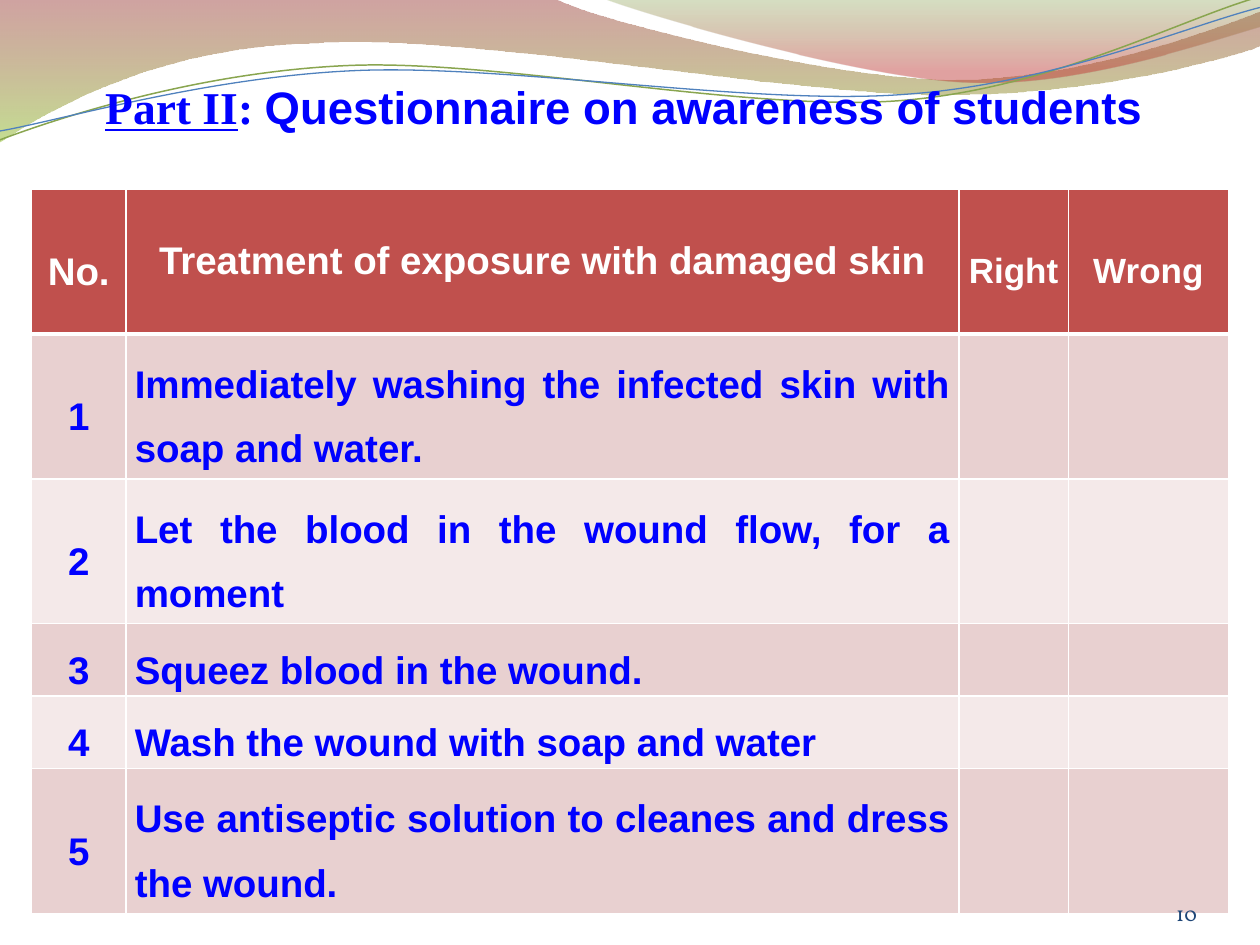
import math
import pptx
import pptx.util
import pptx.dml.color
import pptx.enum.text
import pptx.oxml
import pptx.oxml.ns
from pptx.util import Inches, Pt

RGBColor = pptx.dml.color.RGBColor
ALIGN = pptx.enum.text.PP_ALIGN
ANCHOR = pptx.enum.text.MSO_ANCHOR
qn = pptx.oxml.ns.qn
NS = pptx.oxml.ns.nsdecls("a")

BLUE = RGBColor(0x00, 0x00, 0xFF)
NAVY = RGBColor(0x1E, 0x46, 0x77)
WHITE = RGBColor(0xFF, 0xFF, 0xFF)
RED = RGBColor(0xC0, 0x50, 0x4D)
ROSE = RGBColor(0xE8, 0xD0, 0xD0)
PALE = RGBColor(0xF4, 0xE9, 0xE9)
WINE = RGBColor(0x97, 0x33, 0x30)
LIME = RGBColor(0x95, 0xC2, 0x38)
OLIVE = RGBColor(0x76, 0x95, 0x37)
BRICK = RGBColor(0xBE, 0x33, 0x30)
GREEN = RGBColor(0x89, 0xA5, 0x4F)
SKY = RGBColor(0x4F, 0x81, 0xBD)

# Each wave is a start point, then points (2 numbers) or Bezier curves (6).
BAND = [(0, 0), (4.4, -0.01),
        (4.76, 0.17, 6.64, 0.63, 7.58, 0.63),
        (8.53, 0.63, 9.58, 0.26, 10, 0.09), (10.01, 0.36),
        (9.83, 0.44, 8.7, 0.76, 7.46, 0.75),
        (6.22, 0.75, 3.82, 0.28, 2.57, 0.34),
        (1.29, 0.36, 0.46, 0.83, -0.01, 1.13)]
CREST = [(4.79, -0.01),
         (5.09, 0.11, 6.82, 0.62, 7.69, 0.65),
         (8.56, 0.69, 9.61, 0.32, 10, 0.21), (10, 0)]
UPPER = [(0, 1.11),
         (0.48, 0.93, 1.58, 0.57, 2.77, 0.52),
         (3.95, 0.47, 5.93, 0.89, 7.13, 0.8),
         (8.33, 0.71, 9.38, 0.15, 9.98, -0.02)]
LOWER = [(0, 1.04),
         (0.47, 0.96, 1.64, 0.61, 2.83, 0.56),
         (4.03, 0.51, 5.97, 0.84, 7.17, 0.75),
         (8.36, 0.67, 9.41, 0.21, 10, 0.06)]
TILT = -2.7

TALL = 1.15
COLS = [0.75, 6.61, 0.87, 1.27]
ROWS = [TALL, TALL, TALL, TALL / 2, TALL / 2, TALL]
HEADS = ["No.", "Treatment of exposure with damaged skin", "Right", "Wrong"]
ITEMS = ["Immediately washing the infected skin with soap and water.",
         "Let the blood in the wound flow, for a moment",
         "Squeez blood in the wound.",
         "Wash the wound with soap and water",
         "Use antiseptic solution to cleanes and dress the wound."]


def turn(point, angle, pivot):
    rad = math.radians(angle)
    x, y = point[0] - pivot[0], point[1] - pivot[1]
    return (pivot[0] + x * math.cos(rad) - y * math.sin(rad),
            pivot[1] + x * math.sin(rad) + y * math.cos(rad))


def add_wave(slide, wave, close, tilt=0, pivot=(5, 0.57)):
    """Draw a wave; a tilted one is laid level, then rotated into place."""
    points = [turn(part[i:i + 2], -tilt, pivot)
              for part in wave for i in range(0, len(part), 2)]
    points = [(x * 1000, y * 1000) for x, y in points]
    pen = slide.shapes.build_freeform(*points[0], scale=Inches(1) / 1000)
    pen.add_line_segments(points[1:], close=close)
    shape = pen.convert_to_shape()
    shape.shadow.inherit = False
    shape.rotation = tilt
    lines = list(shape._element.iter(qn("a:lnTo")))
    for part in wave[1:]:
        group, lines = lines[:len(part) // 2], lines[len(part) // 2:]
        if len(group) == 3:
            bend = pptx.oxml.parse_xml(f"<a:cubicBezTo {NS}/>")
            group[0].addprevious(bend)
            for line in group:
                bend.append(line[0])
                line.getparent().remove(line)
    return shape


def add_fill(slide, wave, stops):
    """Draw a filled wave; stops hold position, colour and opacity."""
    shape = add_wave(slide, wave, True)
    shape.line.fill.background()
    shape.fill.gradient()
    shape.fill.gradient_angle = 270
    for stop, (place, color, _) in zip(shape.fill.gradient_stops, stops):
        stop.position = place
        stop.color.rgb = color
    tags = list(shape._element.spPr.iter(qn("a:srgbClr")))
    for tag, (_, _, alpha) in zip(tags, stops):
        tag.append(pptx.oxml.parse_xml(
            f'<a:alpha {NS} val="{alpha * 1000}"/>'))


def add_curve(slide, wave, color, width):
    shape = add_wave(slide, wave, False, TILT)
    shape.fill.background()
    shape.line.color.rgb = color
    shape.line.width = Pt(width)


def style(run, face, size, color, bold=True):
    font = run.font
    font.name = face
    font.size = Pt(size)
    font.color.rgb = color
    font.bold = bold


def add_title(slide):
    title = slide.shapes.title
    slide.shapes._spTree.append(title._element)
    title.left, title.top = Inches(0.58), Inches(0.58)
    title.width, title.height = Inches(8.75), Inches(0.54)
    frame = title.text_frame
    frame.vertical_anchor = ANCHOR.TOP
    frame.auto_size = pptx.enum.text.MSO_AUTO_SIZE.SHAPE_TO_FIT_TEXT
    line = frame.paragraphs[0]
    line.alignment = ALIGN.CENTER
    for text, face in [("Part II", "Times New Roman"),
                       (": ", "Times New Roman"),
                       ("Questionnaire on awareness of students", "Arial")]:
        run = line.add_run()
        run.text = text
        style(run, face, 26, BLUE)
    line.runs[0].font.underline = True


def edge_cell(cell, sides):
    """Give white borders; sides maps L, R, T, B to a width in points."""
    props = cell._tc.get_or_add_tcPr()
    for i, (side, width) in enumerate(sides.items()):
        props.insert(i, pptx.oxml.parse_xml(
            f'<a:ln{side} {NS} w="{Pt(width)}"><a:solidFill>'
            f'<a:srgbClr val="{WHITE}"/></a:solidFill></a:ln{side}>'))


def fill_cell(cell, text, size, color, align, spaced=True, before=6):
    cell.vertical_anchor = ANCHOR.MIDDLE
    cell.margin_left = cell.margin_right = Inches(0.07)
    cell.margin_top = cell.margin_bottom = 0
    line = cell.text_frame.paragraphs[0]
    line.text = text
    line.alignment = align
    if spaced:
        line.line_spacing = 1.5
        line.space_before = Pt(before)
        line.space_after = Pt(6)
    style(line.runs[0], "Arial", size, color)


def add_grid(slide):
    table = slide.shapes.add_table(
        len(ROWS), len(COLS), Inches(0.25), Inches(1.5),
        Inches(sum(COLS)), Inches(sum(ROWS))).table
    for col, width in zip(table.columns, COLS):
        col.width = Inches(width)
    for i, height in enumerate(ROWS):
        table.rows[i].height = Inches(height)
        for cell in table.rows[i].cells:
            cell.fill.solid()
            cell.fill.fore_color.rgb = (
                RED if i == 0 else ROSE if i % 2 else PALE)
            edge_cell(cell, {"L": 1, "R": 1, "T": 3 if i == 1 else 1,
                             "B": 3 if i == 0 else 1})
    for j, head in enumerate(HEADS):
        fill_cell(table.cell(0, j), head, 22 if j < 2 else 20, WHITE,
                  ALIGN.CENTER, spaced=j != 1)
    for i, item in enumerate(ITEMS, 1):
        before = 0 if i == len(ITEMS) else 6
        for j, (text, align) in enumerate([(str(i), ALIGN.CENTER),
                                           (item, ALIGN.JUSTIFY)]):
            fill_cell(table.cell(i, j), text, 22, BLUE, align, before=before)


def add_number(slide):
    box = slide.shapes.add_textbox(
        Inches(8.67), Inches(6.95), Inches(0.83), Inches(0.4))
    frame = box.text_frame
    frame.word_wrap = True
    frame.vertical_anchor = ANCHOR.BOTTOM
    frame.margin_left = frame.margin_right = 0
    frame.margin_top = frame.margin_bottom = 0
    frame.text = "10"
    line = frame.paragraphs[0]
    line.alignment = ALIGN.RIGHT
    style(line.runs[0], "Vollkorn", 12, NAVY, bold=False)


def main():
    deck = pptx.Presentation()
    deck.slide_width, deck.slide_height = Inches(10), Inches(7.5)
    slide = deck.slides.add_slide(deck.slide_layouts[5])
    add_fill(slide, BAND, [(0, WINE, 45), (1, LIME, 55)])
    add_fill(slide, CREST, [(0, OLIVE, 30), (0.8, BRICK, 45)])
    add_curve(slide, UPPER, GREEN, 0.85)
    add_curve(slide, LOWER, SKY, 0.75)
    add_grid(slide)
    add_title(slide)
    add_number(slide)
    deck.save("out.pptx")


if __name__ == "__main__":
    main()
